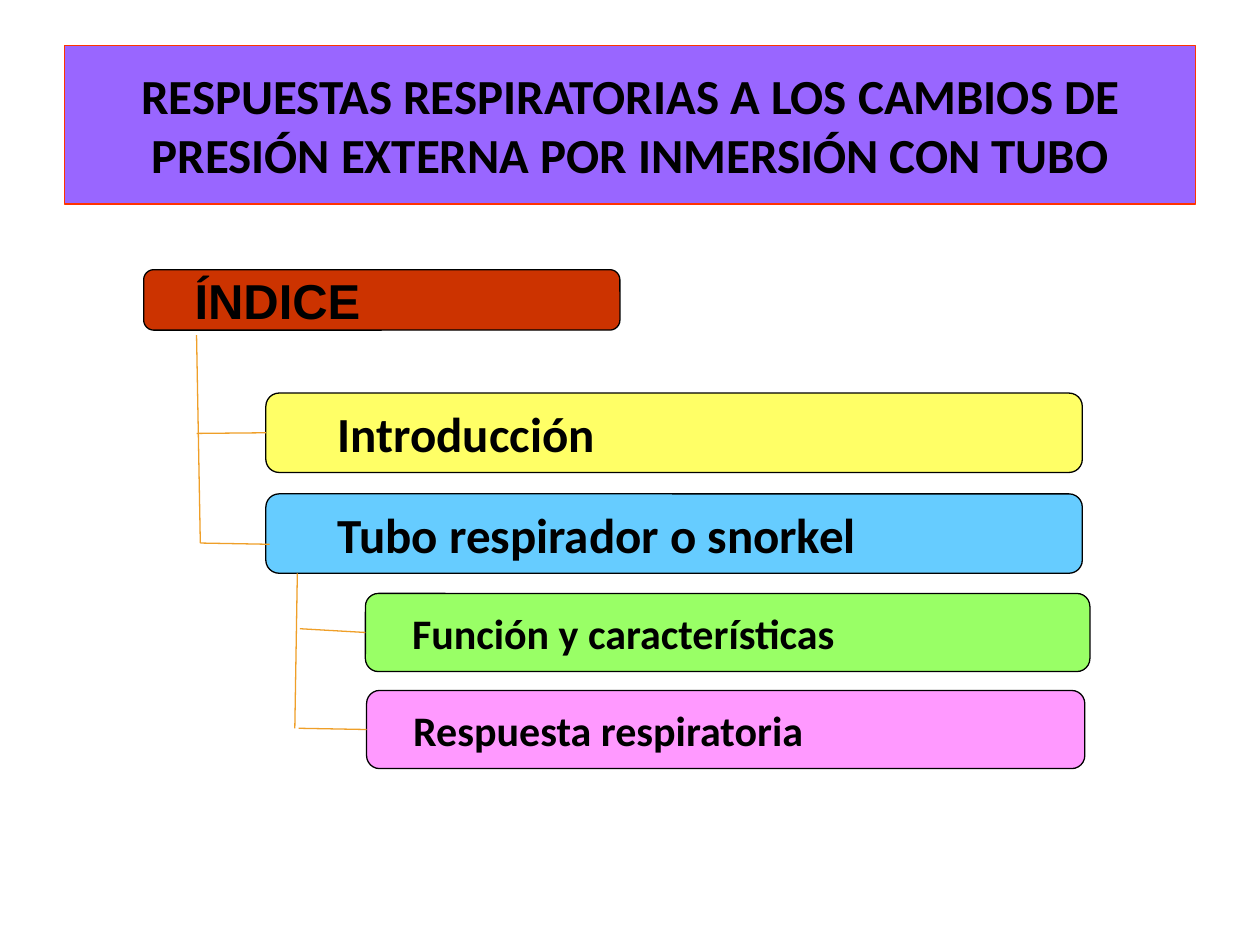
from pptx import Presentation
from pptx.dml.color import RGBColor
from pptx.enum.shapes import MSO_CONNECTOR as Connector, MSO_SHAPE as Shape
from pptx.enum.text import MSO_ANCHOR as Anchor, PP_ALIGN as Align
from pptx.oxml.ns import qn
from pptx.util import Inches, Pt
from lxml.etree import SubElement

COLORS = {
    "title": "9966FF", "title_line": "FF3300", "index": "CC3300",
    "intro": "FFFF66", "snorkel": "66CCFF", "function": "99FF66",
    "response": "FF99FF", "black": "000000", "branch": "EF9F28",
}
LEFT_SIDE = 1


def color(name):
    """Return the named colour."""
    return RGBColor.from_string(COLORS[name])


def add_box(slide, kind, area, fill, line):
    """Add a flat filled shape with a thin outline."""
    box = slide.shapes.add_shape(kind, *map(Inches, area))
    box.shadow.inherit = False
    box.fill.solid()
    box.fill.fore_color.rgb = color(fill)
    box.line.color.rgb = color(line)
    box.line.width = Pt(0.75)
    box.text_frame.word_wrap = True
    box.text_frame.vertical_anchor = Anchor.MIDDLE
    return box


def add_text(box, text, size, font="Calibri", align=Align.LEFT):
    """Write one bold black run into a box and return its paragraph."""
    para = box.text_frame.paragraphs[0]
    para.alignment = align
    span = para.add_run()
    span.text = text
    span.font.name = font
    span.font.size = Pt(size)
    span.font.bold = True
    span.font.color.rgb = color("black")
    return para


def add_title(slide, area, text):
    """Add the title banner."""
    box = add_box(slide, Shape.RECTANGLE, area, "title", "title_line")
    add_text(box, text, 28, align=Align.CENTER)


def add_entry(slide, area, fill, text, size, indent, font="Calibri", before=0.2):
    """Add a rounded index entry with indented text."""
    box = add_box(slide, Shape.ROUNDED_RECTANGLE, area, fill, "black")
    frame = box.text_frame
    frame.margin_left = frame.margin_right = Inches(0.04)
    frame.margin_top = frame.margin_bottom = Inches(0.02)
    para = add_text(box, text, size, font)
    para.space_before = Pt(round(size * before, 1))
    properties = para._p.get_or_add_pPr()
    properties.set("marL", str(Inches(indent)))
    properties.set("indent", "0")
    return box


def add_line(slide, start, end, target=None):
    """Add a branch line, joined to the left side of a target if given."""
    line = slide.shapes.add_connector(Connector.STRAIGHT, *map(Inches, start + end))
    line.line.color.rgb = color("branch")
    line.line.width = Pt(0.75)
    SubElement(line._element.spPr, qn("a:effectLst"))
    if target is not None:
        line.end_connect(target, LEFT_SIDE)


def add_index(slide, left, top):
    """Add the index tree with its entries and branches."""
    def at(x, y):
        return left + x, top + y

    add_entry(slide, at(0, 0) + (3.78, 0.48), "index", "ÍNDICE", 28, 0.34, "Arial", 0)
    intro, _ = [
        add_entry(slide, at(0.97, 0.98 + 0.8 * row) + (6.48, 0.63), fill, text, 28, 0.5)
        for row, (fill, text) in enumerate([
            ("intro", "Introducción"), ("snorkel", "Tubo respirador o snorkel")])
    ]
    function, response = [
        add_entry(slide, at(x, y) + (width, 0.62), fill, text, 24, 0.3)
        for x, y, width, fill, text in [
            (1.76, 2.57, 5.75, "function", "Función y características"),
            (1.77, 3.34, 5.7, "response", "Respuesta respiratoria")]
    ]
    for start, end, target in [
        ((0.42, 0.52), (0.45, 2.17), None),
        ((0.42, 1.3), (0.97, 1.3), intro),
        ((1.22, 2.41), (1.2, 3.64), None),
        ((0.45, 2.17), (1, 2.18), None),
        ((1.24, 2.85), (1.79, 2.86), function),
        ((1.23, 3.64), (1.77, 3.65), response),
    ]:
        add_line(slide, at(*start), at(*end), target)


def main():
    """Build the deck and save it."""
    deck = Presentation()
    deck.slide_width, deck.slide_height = Inches(10), Inches(7.5)
    page = deck.slides.add_slide(deck.slide_layouts[6])
    add_title(page, (0.51, 0.36, 8.98, 1.26),
              "RESPUESTAS RESPIRATORIAS A LOS CAMBIOS DE "
              "PRESIÓN EXTERNA POR INMERSIÓN CON TUBO")
    add_index(page, 1.14, 2.14)
    deck.save("out.pptx")


if __name__ == "__main__":
    main()
